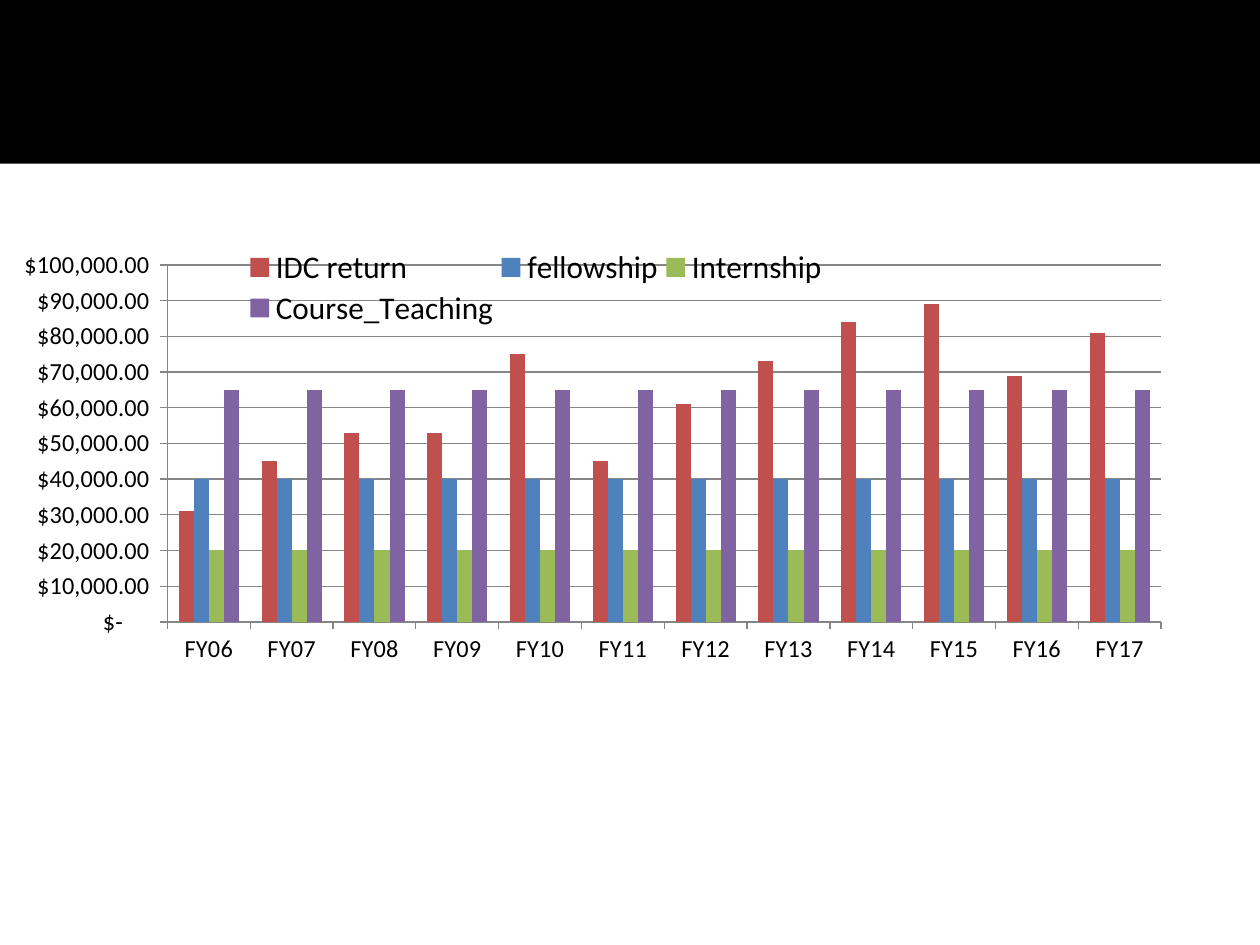
from lxml.etree import SubElement
from pptx import Presentation
from pptx.chart.data import CategoryChartData
from pptx.dml.color import RGBColor
from pptx.enum.chart import XL_CHART_TYPE, XL_LEGEND_POSITION, XL_TICK_MARK
from pptx.enum.shapes import MSO_SHAPE
from pptx.oxml import parse_xml
from pptx.oxml.ns import nsdecls, qn
from pptx.util import Inches, Pt

COLORS = {
    "band": "000000",
    "text": "000000",
    "grid": "868686",
    "IDC return": "C0504D",
    "fellowship": "4F81BD",
    "Internship": "9BBB59",
    "Course_Teaching": "8064A2",
}
FONT = "Calibri"
DOLLARS = '_("$"* #,##0.00_);_("$"* \\(#,##0.00\\);_("$"* "-"??_);_(@_)'

YEARS = [f"FY{year:02d}" for year in range(6, 18)]
IDC_RETURN = [31000, 45000, 53000, 53000, 75000, 45000,
              61000, 73000, 84000, 89000, 69000, 81000]
YEARLY_COSTS = {"fellowship": 40000, "Internship": 20000, "Course_Teaching": 65000}


def color(key):
    return RGBColor.from_string(COLORS[key])


def style_font(font, size):
    font.name = FONT
    font.size = Pt(size)
    font.color.rgb = color("text")


def make_layout(x, y, width, height, inner=False):
    """Return a manual chart layout, in fractions of the chart area."""
    layout = parse_xml(f"<c:layout {nsdecls('c')}><c:manualLayout/></c:layout>")
    settings = [("layoutTarget", "inner")] if inner else []
    settings += [("xMode", "edge"), ("yMode", "edge"),
                 ("x", x), ("y", y), ("w", width), ("h", height)]
    for tag, value in settings:
        SubElement(layout[0], qn(f"c:{tag}")).set("val", str(value))
    return layout


def replace_layout(parent, position, layout):
    for old_layout in parent.findall(qn("c:layout")):
        parent.remove(old_layout)
    parent.insert(position, layout)


def add_header_band(slide):
    band = slide.shapes.add_shape(
        MSO_SHAPE.RECTANGLE, 0, 0, Inches(10), Inches(1.3))
    band.shadow.inherit = False
    band.fill.solid()
    band.fill.fore_color.rgb = color("band")
    band.line.fill.background()


def style_axis(axis):
    axis.major_tick_mark = XL_TICK_MARK.OUTSIDE
    axis.minor_tick_mark = XL_TICK_MARK.NONE
    axis.format.line.color.rgb = color("grid")
    style_font(axis.tick_labels.font, 14)


def add_funding_chart(slide):
    funding = CategoryChartData()
    funding.categories = YEARS
    funding.add_series("IDC return", IDC_RETURN)
    for name, cost in YEARLY_COSTS.items():
        funding.add_series(name, [cost] * len(YEARS))

    chart = slide.shapes.add_chart(
        XL_CHART_TYPE.COLUMN_CLUSTERED, Inches(0.15), Inches(1.95),
        Inches(9.43), Inches(3.33), funding).chart
    chart.has_title = False
    style_font(chart.font, 10)

    # Columns
    columns = chart.plots[0]
    columns.gap_width = 150
    columns.overlap = 0
    columns.vary_by_categories = False
    for series in columns.series:
        series.format.fill.solid()
        series.format.fill.fore_color.rgb = color(series.name)
    replace_layout(chart._chartSpace.chart.plotArea, 0,
                   make_layout(0.117, 0.046, 0.844, 0.851, inner=True))

    # Axes
    style_axis(chart.category_axis)
    dollars = chart.value_axis
    style_axis(dollars)
    dollars.minimum_scale = 0
    dollars.maximum_scale = 100000
    dollars.major_unit = 10000
    dollars.tick_labels.number_format = DOLLARS
    dollars.tick_labels.number_format_is_linked = False
    dollars.has_major_gridlines = True
    dollars.major_gridlines.format.line.color.rgb = color("grid")

    # Legend over the top of the columns
    chart.has_legend = True
    legend = chart.legend
    legend.position = XL_LEGEND_POSITION.RIGHT
    legend.include_in_layout = True
    style_font(legend.font, 18)
    replace_layout(legend._element, 1, make_layout(0.18, 0, 0.5, 0.2))


def main():
    prs = Presentation()
    prs.slide_width = Inches(10)
    prs.slide_height = Inches(7.5)
    slide = prs.slides.add_slide(prs.slide_layouts[6])
    add_header_band(slide)
    add_funding_chart(slide)
    prs.save("out.pptx")


if __name__ == "__main__":
    main()
